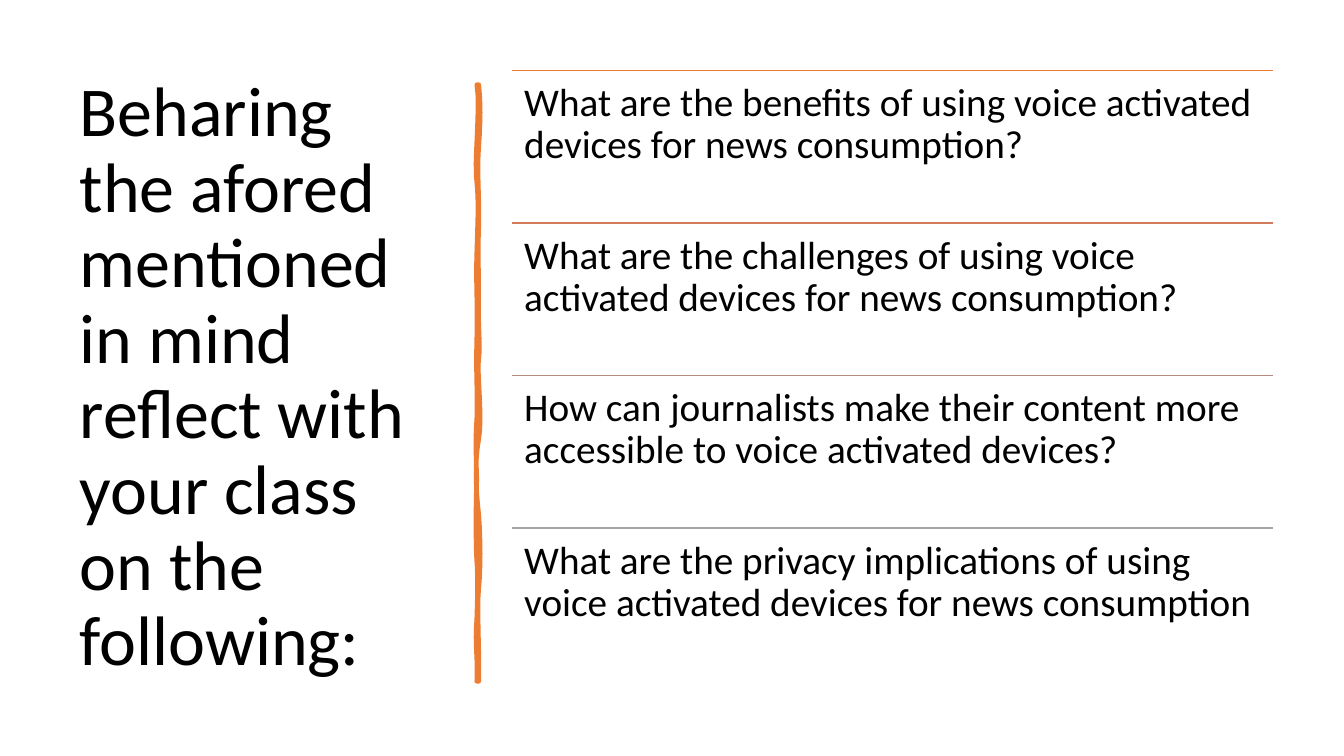
from pptx import Presentation
from pptx.dml.color import RGBColor
from pptx.enum.text import MSO_ANCHOR, MSO_AUTO_SIZE, PP_ALIGN
from pptx.oxml.ns import qn
from pptx.util import Pt
from lxml import etree

LEFT = PP_ALIGN.LEFT
TOP, MIDDLE = MSO_ANCHOR.TOP, MSO_ANCHOR.MIDDLE
NO_FIT = MSO_AUTO_SIZE.NONE

# Content
TITLE = "Beharing the afored mentioned in mind reflect with your class on the following:"
QUESTIONS = [
    ("ED7D31", "What are the benefits of using voice activated devices for news consumption?"),
    ("D17B5C", "What are the challenges of using voice activated devices for news consumption?"),
    ("B98A82", "How can journalists make their content more accessible to voice activated devices?"),
    ("A5A5A5", "What are the privacy implications of using voice activated devices for news consumption"),
]

# Layout in points
TITLE_BOX = (49.7, 50.4, 269.3, 439.9)
ROW_X, ROW_Y, ROW_W, ROW_H = 365.8, 50.4, 543.6, 108.95
ROW_INSET = 8.64

# Hand-drawn bar: side x, start y, then curves of (x1, y1, x2, y2, end y)
ACCENT = "ED7D31"
RIGHT_SIDE = (342, 60.5, [
    (343.4, 73.4, 343.4, 85.7, 105.1), (340.6, 124.6, 342.7, 140.4, 162.7),
    (341.3, 185, 342, 188.6, 211.7), (341.3, 234, 343.4, 246.2, 256.3),
    (340.6, 266.4, 344.9, 298.1, 313.9), (339.1, 329, 339.8, 348.5, 367.2),
    (343.4, 385.9, 343.4, 406.1, 420.5), (340.6, 434.2, 342.7, 468, 486.7),
])
LEFT_SIDE = (340.6, 486.7, [
    (341.3, 465.1, 339.1, 463.7, 441.4), (341.3, 419.8, 341.3, 410.4, 401),
    (339.8, 391.7, 339.8, 356.4, 343.4), (340.6, 330.5, 339.1, 320.4, 298.8),
    (341.3, 277.9, 339.8, 268.6, 241.2), (341.3, 214.6, 339.8, 202.3, 180),
    (341.3, 157, 342, 144, 130.3), (338.4, 117.4, 343.4, 74.9, 60.5),
])
CURVE_STEPS = 8


def rgb(color):
    return RGBColor.from_string(color)


def side_points(x, y, curves):
    points = [(Pt(x), Pt(y))]
    for x1, y1, x2, y2, end in curves:
        for i in range(1, CURVE_STEPS + 1):
            t = i / CURVE_STEPS
            u = 1 - t
            a, b, c, d = u ** 3, 3 * u * u * t, 3 * u * t * t, t ** 3
            points.append((Pt(a * x + b * x1 + c * x2 + d * x),
                           Pt(a * y + b * y1 + c * y2 + d * end)))
        y = end
    return points


def write(sp, text, size, anchor, **frame):
    tf = sp.text_frame
    values = {"word_wrap": True, "auto_size": NO_FIT, "vertical_anchor": anchor, **frame}
    for name, value in values.items():
        setattr(tf, name, value)
    p = tf.paragraphs[0]
    p.alignment, p.line_spacing = LEFT, 0.9
    r = p.add_run()
    r.text = text
    for name, value in {"name": "Calibri", "size": Pt(size)}.items():
        setattr(r.font, name, value)
    r.font.color.rgb = rgb("000000")


prs = Presentation()
prs.slide_width, prs.slide_height = Pt(960), Pt(540)
s = prs.slides.add_slide(prs.slide_layouts[5])

# Title
title = s.shapes.title
title.left, title.top, title.width, title.height = map(Pt, TITLE_BOX)
write(title, TITLE, 50, MIDDLE)

# Vertical bar
outline = side_points(*RIGHT_SIDE) + side_points(*LEFT_SIDE)
builder = s.shapes.build_freeform(*outline[0])
builder.add_line_segments(outline[1:], close=True)
bar = builder.convert_to_shape()
bar.shadow.inherit = False
bar.fill.solid()
bar.fill.fore_color.rgb = rgb(ACCENT)
bar.line.color.rgb = rgb(ACCENT)
bar.line.width = Pt(3.25)
etree.SubElement(bar.line._get_or_add_ln(), qn("a:round"))

# Questions, each under a rule
insets = {f"margin_{side}": Pt(ROW_INSET) for side in ("left", "top", "right", "bottom")}
for i, (color, question) in enumerate(QUESTIONS):
    y = ROW_Y + i * ROW_H
    rule = s.shapes.add_connector(1, Pt(ROW_X), Pt(y), Pt(ROW_X + ROW_W), Pt(y))
    rule.line.color.rgb = rgb(color)
    rule.line.width = Pt(1)
    etree.SubElement(rule._element.spPr, qn("a:effectLst"))
    box = s.shapes.add_textbox(Pt(ROW_X), Pt(y), Pt(ROW_W), Pt(ROW_H))
    write(box, question, 28, TOP, **insets)

prs.save("out.pptx")
